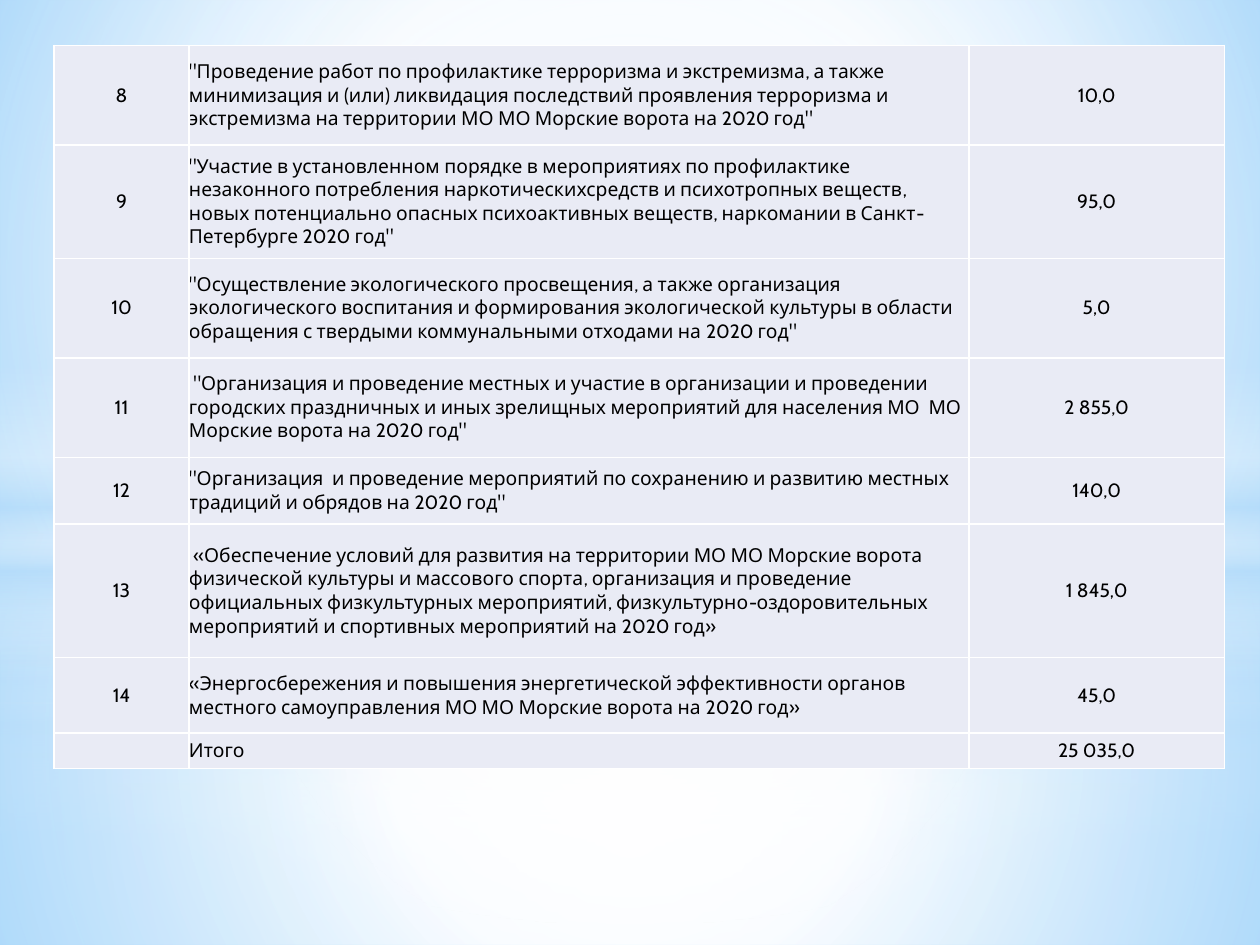
from dataclasses import dataclass

from pptx import Presentation
from pptx.dml.color import RGBColor
from pptx.enum import shapes, text
from pptx.oxml import parse_xml
from pptx.oxml.ns import nsdecls, qn
from pptx.util import Inches, Pt


@dataclass(frozen=True)
class Theme:
    font: str = "Cabin"
    size: float = 11
    ink: str = "000000"
    cell: str = "E9EBF5"
    border: str = "FFFFFF"
    border_width: float = 1
    white: str = "FFFFFF"
    haze: str = "B4DCFA"
    sky: str = "9ED5FF"
    deep_sky: str = "5BB9FF"


THEME = Theme()
CENTER = (50, 50, 50, 50)
COLUMN_WIDTHS = (1.07, 6.19, 2.03)

# Row height, number, programme, amount
ROWS = (
    (0.79, "8", '"Проведение работ по профилактике терроризма и экстремизма, а также '
     'минимизация и (или) ликвидация последствий проявления терроризма и экстремизма '
     'на территории МО МО Морские ворота на 2020 год"', "10,0"),
    (0.9, "9", '"Участие в установленном порядке в мероприятиях по профилактике '
     'незаконного потребления наркотическихсредств и психотропных веществ, новых '
     'потенциально опасных психоактивных веществ, наркомании в Санкт-Петербурге '
     '2020 год"', "95,0"),
    (0.79, "10", '"Осуществление экологического просвещения, а также организация '
     'экологического воспитания и формирования экологической культуры в области '
     'обращения с твердыми коммунальными отходами на 2020 год"', "5,0"),
    (0.79, "11", ' "Организация и проведение местных и участие в организации и проведении '
     'городских праздничных и иных зрелищных мероприятий для населения МО  МО '
     'Морские ворота на 2020 год"', "2 855,0"),
    (0.53, "12", '"Организация  и проведение мероприятий по сохранению и развитию '
     'местных традиций и обрядов на 2020 год"', "140,0"),
    (1.06, "13", " «Обеспечение условий для развития на территории МО МО Морские ворота "
     "физической культуры и массового спорта, организация и проведение официальных "
     "физкультурных мероприятий, физкультурно-оздоровительных мероприятий и "
     "спортивных мероприятий на 2020 год»", "1 845,0"),
    (0.6, "14", "«Энергосбережения и повышения энергетической эффективности органов "
     "местного самоуправления МО МО Морские ворота на 2020 год»", "45,0"),
    (0.27, "", "Итого", "25 035,0"),
)


def paint_gradient(properties, stops, focus=None):
    """Replace an empty fill by a circular gradient, or a vertical one without focus."""
    marks = "".join(
        f'<a:gs pos="{place * 1000}"><a:srgbClr val="{color}">'
        f'<a:alpha val="{opacity * 1000}"/></a:srgbClr></a:gs>'
        for place, color, opacity in stops
    )
    if focus:
        sides = " ".join(f'{side}="{share * 1000}"' for side, share in zip("ltrb", focus))
        direction = f'<a:path path="circle"><a:fillToRect {sides}/></a:path>'
    else:
        direction = '<a:lin ang="5400000" scaled="0"/>'
    gradient = parse_xml(
        f'<a:gradFill {nsdecls("a")} rotWithShape="1">'
        f"<a:gsLst>{marks}</a:gsLst>{direction}</a:gradFill>"
    )
    properties.replace(properties.find(qn("a:noFill")), gradient)


def add_glow(page, kind, top, height, stops, focus=None):
    glow = page.shapes.add_shape(kind, 0, Inches(top), Inches(10), Inches(height))
    glow.shadow.inherit = False
    glow.line.fill.background()
    glow.fill.background()
    paint_gradient(glow.element.spPr, stops, focus)


def add_horizon(page, horizon, band_top, shift, halo_end):
    """Layer the ground, sky, misty band and halo that meet at one horizon."""
    white, haze = THEME.white, THEME.haze
    rectangle, oval = shapes.MSO_SHAPE.RECTANGLE, shapes.MSO_SHAPE.OVAL
    ground = [(0, white, 91 + shift), (37, white, 76 + shift), (100, haze, 79 + shift)]
    sky = [(0, white, 89 + shift), (48, white, 62 + shift), (100, haze, 79 + shift)]
    band = [(0, white, 0), (29, white, 30), (45, haze, 40),
            (55, white, 26), (65, haze, 60), (100, white, 0)]
    halo = [(0, white, 100), (halo_end, white, 0)]
    add_glow(page, rectangle, horizon, 7.5 - horizon, ground, CENTER)
    add_glow(page, rectangle, 0, horizon, sky, CENTER)
    add_glow(page, rectangle, band_top, 2.5, band)
    add_glow(page, oval, 1.75, 5.58, halo, CENTER)


def add_borders(cell):
    properties = cell._tc.get_or_add_tcPr()
    for side in ("lnL", "lnR", "lnT", "lnB"):
        properties.append(parse_xml(
            f'<a:{side} {nsdecls("a")} w="{Pt(THEME.border_width)}"><a:solidFill>'
            f'<a:srgbClr val="{THEME.border}"/></a:solidFill></a:{side}>'
        ))


def write_cell(cell, words, align=text.PP_ALIGN.LEFT):
    add_borders(cell)
    cell.fill.solid()
    cell.fill.fore_color.rgb = RGBColor.from_string(THEME.cell)
    cell.vertical_anchor = text.MSO_ANCHOR.MIDDLE
    cell.margin_left = cell.margin_right = cell.margin_top = cell.margin_bottom = 0
    para = cell.text_frame.paragraphs[0]
    para.alignment = align
    span = para.add_run()
    span.text = words
    span.font.name = THEME.font
    span.font.size = Pt(THEME.size)
    span.font.color.rgb = RGBColor.from_string(THEME.ink)


def add_programme_table(page):
    height = sum(row[0] for row in ROWS)
    table = page.shapes.add_table(
        len(ROWS), len(COLUMN_WIDTHS), Inches(0.43), Inches(0.36),
        Inches(sum(COLUMN_WIDTHS)), Inches(height),
    ).table
    table.first_row = table.horz_banding = False
    for column, width in zip(table.columns, COLUMN_WIDTHS):
        column.width = Inches(width)
    for row, (row_height, number, programme, amount) in zip(table.rows, ROWS):
        row.height = Inches(row_height)
        write_cell(row.cells[0], number, align=text.PP_ALIGN.CENTER)
        write_cell(row.cells[1], programme)
        write_cell(row.cells[2], amount, align=text.PP_ALIGN.CENTER)


def main():
    deck = Presentation()
    deck.slide_width, deck.slide_height = Inches(10), Inches(7.5)
    page = deck.slides.add_slide(deck.slide_layouts[6])
    page.background.fill.background()
    paint_gradient(
        page.element.cSld.get_or_add_bgPr(),
        [(0, THEME.sky, 100), (60, THEME.white, 100), (100, THEME.deep_sky, 100)],
        (20, 10, 20, 60),
    )
    add_horizon(page, horizon=5.58, band_top=4.12, shift=0, halo_end=56)
    add_horizon(page, horizon=4.23, band_top=2.9, shift=1, halo_end=54)
    add_programme_table(page)
    deck.save("out.pptx")


if __name__ == "__main__":
    main()
